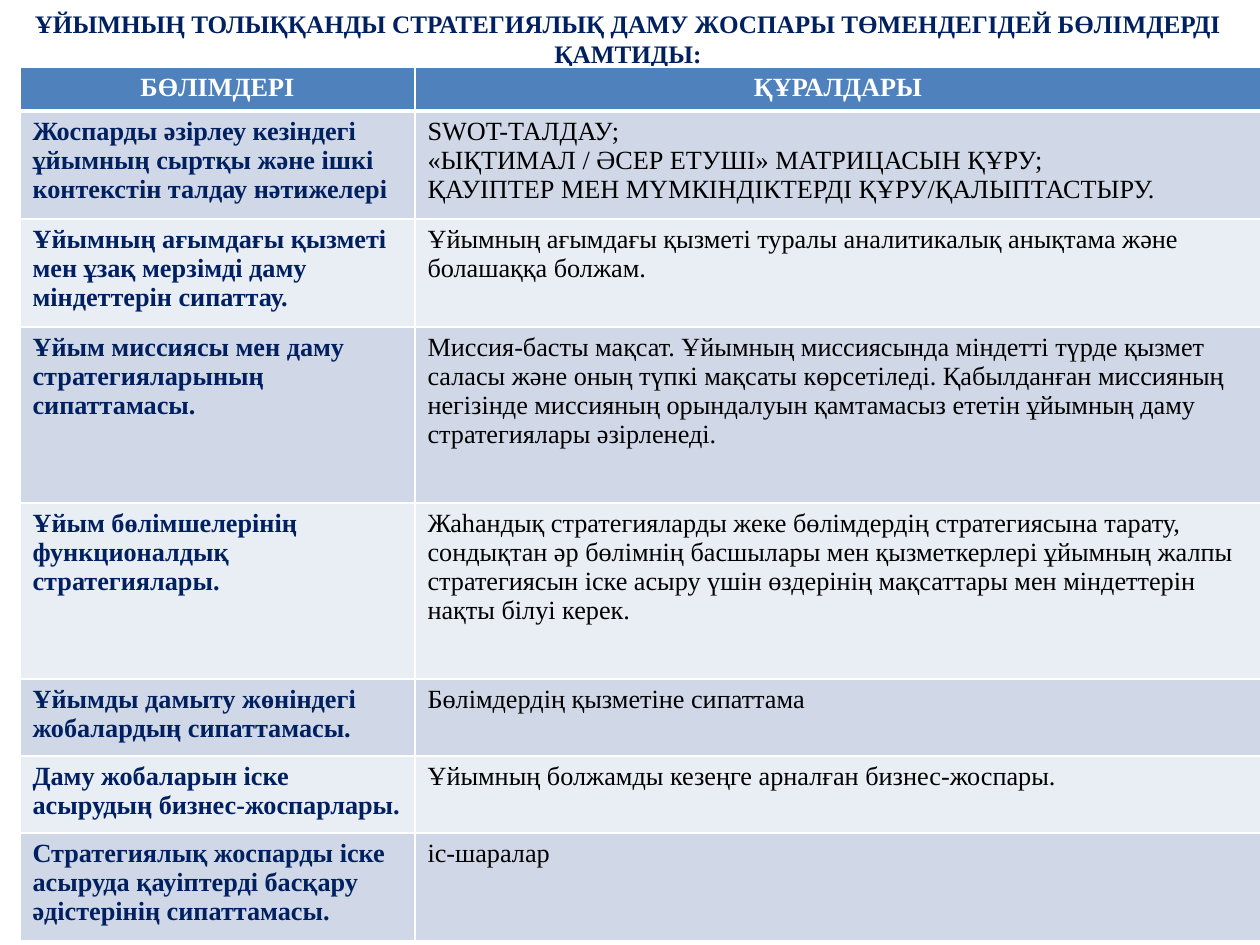
from pptx import Presentation
from pptx import util as u
from pptx.dml.color import RGBColor
from pptx.enum import text
from pptx.oxml import parse_xml
from pptx.oxml.ns import nsdecls

PX = 914400 // 126
FONT = "Times New Roman"
HUES = {"navy": "002060", "white": "FFFFFF", "black": "000000",
        "head": "4F81BD", "odd": "D0D8E8", "even": "E9EDF4"}
TITLE = ("ҰЙЫМНЫҢ ТОЛЫҚҚАНДЫ СТРАТЕГИЯЛЫҚ ДАМУ ЖОСПАРЫ "
         "ТӨМЕНДЕГІДЕЙ БӨЛІМДЕРДІ ҚАМТИДЫ:")
COLS = [395, 846]
ROWS = [
    (44, "БӨЛІМДЕРІ", "ҚҰРАЛДАРЫ"),
    (108, "Жоспарды әзірлеу кезіндегі ұйымның сыртқы және ішкі контекстін "
          "талдау нәтижелері",
     "SWOT-ТАЛДАУ;\n«ЫҚТИМАЛ / ӘСЕР ЕТУШІ» МАТРИЦАСЫН ҚҰРУ;\n"
     "ҚАУІПТЕР МЕН МҮМКІНДІКТЕРДІ ҚҰРУ/ҚАЛЫПТАСТЫРУ."),
    (108, "Ұйымның ағымдағы қызметі мен ұзақ мерзімді даму міндеттерін "
          "сипаттау.",
     "Ұйымның ағымдағы қызметі туралы аналитикалық анықтама және "
     "болашаққа болжам."),
    (176, "Ұйым миссиясы мен даму стратегияларының сипаттамасы.",
     "Миссия-басты мақсат. Ұйымның миссиясында міндетті түрде қызмет саласы "
     "және оның түпкі мақсаты көрсетіледі. Қабылданған миссияның негізінде "
     "миссияның орындалуын қамтамасыз ететін ұйымның даму стратегиялары "
     "әзірленеді."),
    (176, "Ұйым бөлімшелерінің функционалдық стратегиялары.",
     "Жаһандық стратегияларды жеке бөлімдердің стратегиясына тарату, "
     "сондықтан әр бөлімнің басшылары мен қызметкерлері ұйымның жалпы "
     "стратегиясын іске асыру үшін өздерінің мақсаттары мен міндеттерін "
     "нақты білуі керек."),
    (77, "Ұйымды дамыту жөніндегі жобалардың сипаттамасы.",
     "Бөлімдердің қызметіне сипаттама"),
    (77, "Даму жобаларын іске асырудың бизнес-жоспарлары.",
     "Ұйымның болжамды кезеңге арналған бизнес-жоспары."),
    (108, "Стратегиялық жоспарды іске асыруда қауіптерді басқару әдістерінің "
          "сипаттамасы.",
     "іс-шаралар"),
]


def write(frame, words, size, hue, bold, align):
    frame.text = words
    for para in frame.paragraphs:
        para.alignment = align
        for run in para.runs:
            font = run.font
            font.name, font.size, font.bold = FONT, u.Pt(size), bold
            font.color.rgb = RGBColor.from_string(HUES[hue])


def edge(cell, widths):
    props = cell._tc.get_or_add_tcPr()
    for spot, (side, points) in enumerate(widths.items()):
        props.insert(spot, parse_xml(
            f'<a:ln{side} {nsdecls("a")} w="{u.Pt(points)}"><a:solidFill>'
            f'<a:srgbClr val="{HUES["white"]}"/></a:solidFill></a:ln{side}>'))


def add_title(slide):
    box = slide.shapes.add_textbox(*(n * PX for n in (-2, 10, 1260, 57)))
    frame = box.text_frame
    frame.word_wrap = True
    frame.vertical_anchor = text.MSO_ANCHOR.MIDDLE
    write(frame, TITLE, 14.4, "navy", True, text.PP_ALIGN.CENTER)


def fill_cell(cell, words, row, col):
    head = row == 0
    shade = "head" if head else "odd" if row % 2 else "even"
    hue = "white" if head else "black" if col else "navy"
    align = text.PP_ALIGN.CENTER if head else text.PP_ALIGN.LEFT
    write(cell.text_frame, words, 15, hue, head or col == 0, align)
    cell.fill.solid()
    cell.fill.fore_color.rgb = RGBColor.from_string(HUES[shade])
    edge(cell, {"L": 1, "R": 1, "T": 3 if row == 1 else 1,
                "B": 3 if head else 1})


def add_grid(slide):
    high = sum(row[0] for row in ROWS)
    area = (20 * PX, 67 * PX, sum(COLS) * PX, high * PX)
    grid = slide.shapes.add_table(len(ROWS), len(COLS), *area).table
    for col, wide in zip(grid.columns, COLS):
        col.width = wide * PX
    for row, (tall, *cells) in enumerate(ROWS):
        grid.rows[row].height = tall * PX
        for col, words in enumerate(cells):
            fill_cell(grid.cell(row, col), words, row, col)


def main():
    deck = Presentation()
    deck.slide_width, deck.slide_height = u.Inches(10), u.Inches(7.5)
    slide = deck.slides.add_slide(deck.slide_layouts[6])
    add_title(slide)
    add_grid(slide)
    deck.save("out.pptx")


if __name__ == "__main__":
    main()
